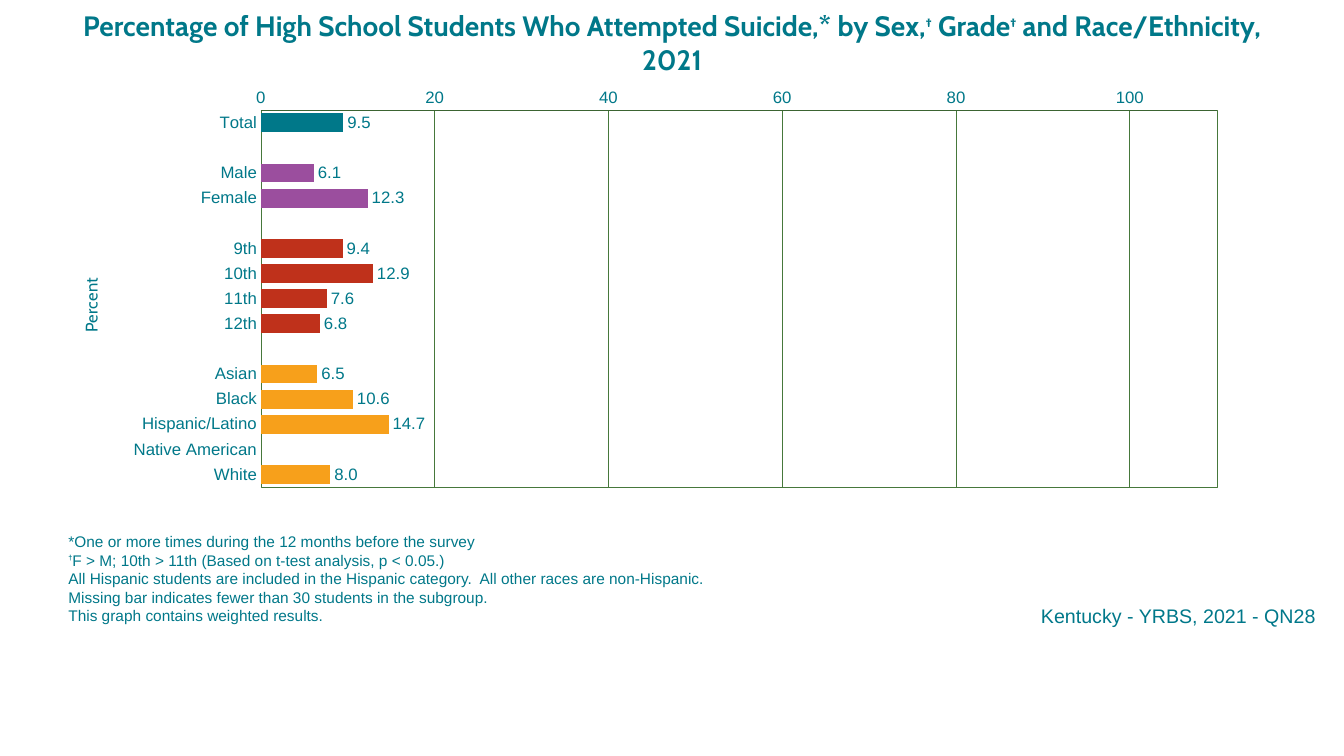
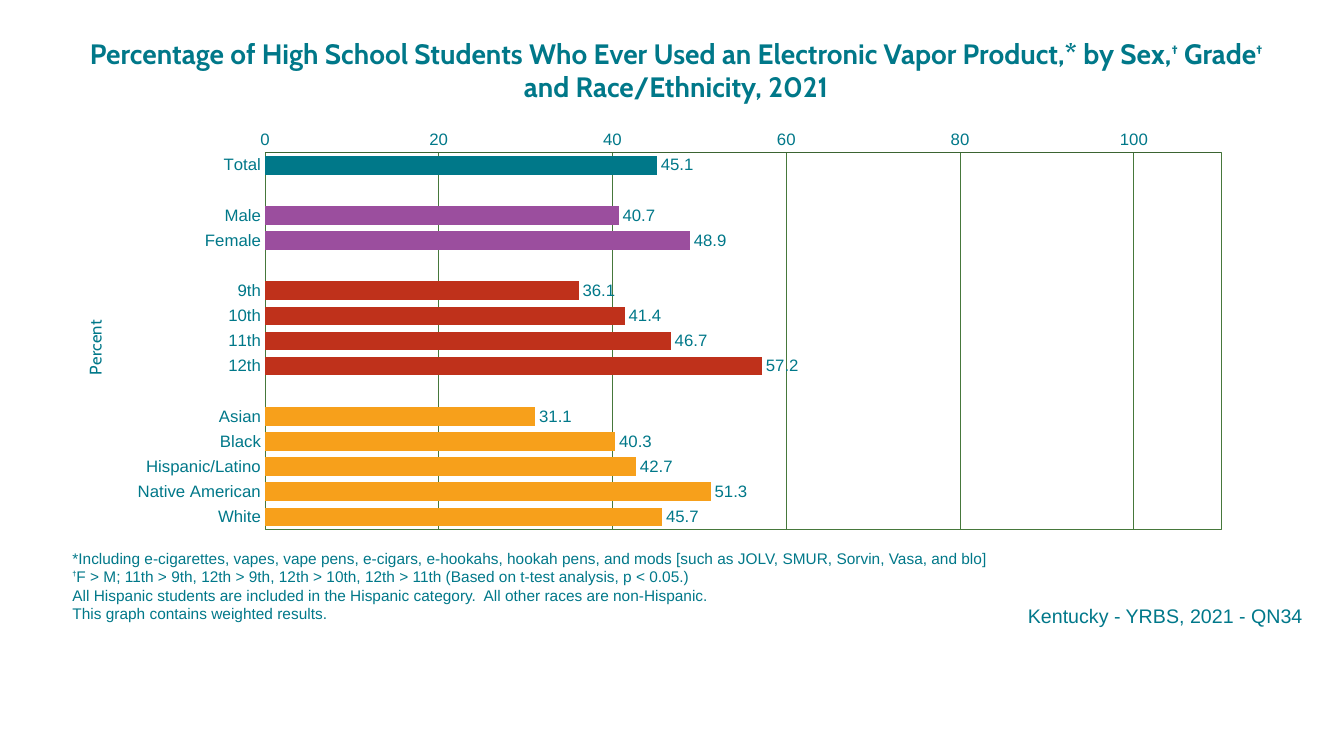
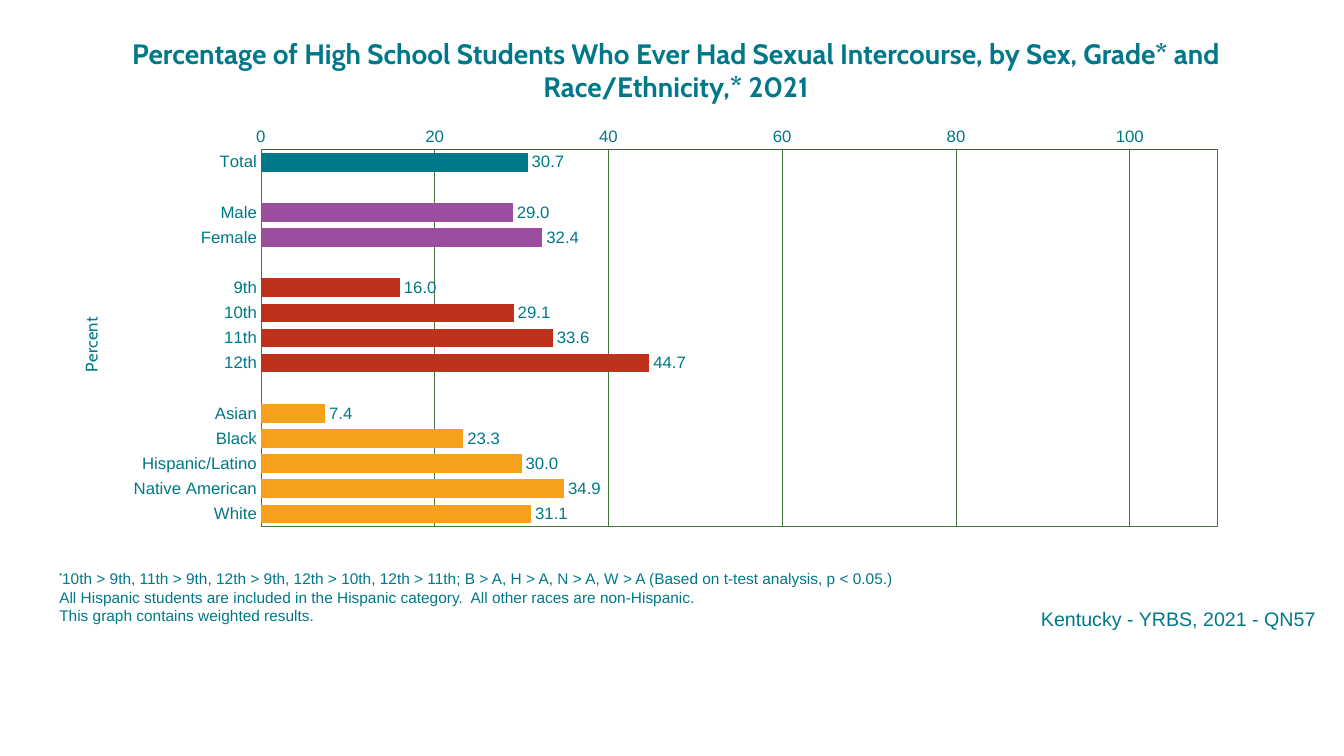
from dataclasses import dataclass

from lxml import etree
from pptx import Presentation
from pptx.chart.data import CategoryChartData
from pptx.dml.color import RGBColor
from pptx.enum.chart import XL_CHART_TYPE, XL_LABEL_POSITION, XL_TICK_MARK
from pptx.enum.text import MSO_ANCHOR, PP_ALIGN
from pptx.oxml import parse_xml
from pptx.oxml.ns import nsdecls, qn
from pptx.util import Inches, Pt

BAR_CLUSTERED = XL_CHART_TYPE.BAR_CLUSTERED
OUTSIDE_END = XL_LABEL_POSITION.OUTSIDE_END
NO_TICK = XL_TICK_MARK.NONE
TOP, BOTTOM = MSO_ANCHOR.TOP, MSO_ANCHOR.BOTTOM
LEFT, CENTER, RIGHT = PP_ALIGN.LEFT, PP_ALIGN.CENTER, PP_ALIGN.RIGHT


@dataclass(frozen=True)
class Theme:
    teal: str = "007889"
    source_teal: str = "00788A"
    purple: str = "9B4E9E"
    red: str = "BF311B"
    orange: str = "F7A01B"
    grid: str = "46783B"
    axis: str = "3B6432"
    heading_font: str = "Cabin"
    body_font: str = "Arial"
    title_size: int = 20
    title_mark_size: int = 17
    chart_size: int = 12
    note_size: int = 11
    note_mark_size: int = 9
    source_size: int = 14


THEME = Theme()

# Each group of bars: colour and category names. A blank row parts the groups.
GROUPS = [
    (THEME.teal, ["Total"]),
    (THEME.purple, ["Male", "Female"]),
    (THEME.red, ["9th", "10th", "11th", "12th"]),
    (THEME.orange, ["Asian", "Black", "Hispanic/Latino", "Native American", "White"]),
]

HISPANIC_NOTE = ("All Hispanic students are included in the Hispanic category.  "
                 "All other races are non-Hispanic.")
WEIGHTED_NOTE = "This graph contains weighted results."

# In titles and notes, ^ raises the character that follows it.
SLIDES = [
    {
        "title": "Percentage of High School Students Who Attempted Suicide,* "
                 "by Sex,^† Grade^† and Race/Ethnicity, 2021",
        "title_at": (0.71, 0.04),
        "values": [[9.5], [6.1, 12.3], [9.4, 12.9, 7.6, 6.8],
                   [6.5, 10.6, 14.7, None, 8.0]],
        "chart_at": (0.58, 0.88),
        "notes": ["*One or more times during the 12 months before the survey",
                  "^†F > M; 10th > 11th (Based on t-test analysis, p < 0.05.)",
                  HISPANIC_NOTE,
                  "Missing bar indicates fewer than 30 students in the subgroup.",
                  WEIGHTED_NOTE],
        "notes_at": (0.58, 5.96),
        "question": "QN28",
        "source_at": (3.75, 5.94),
    },
    {
        "title": "Percentage of High School Students Who Ever Used an Electronic "
                 "Vapor Product,* by Sex,^† Grade^† and Race/Ethnicity, 2021",
        "title_at": (0.75, 0.31),
        "values": [[45.1], [40.7, 48.9], [36.1, 41.4, 46.7, 57.2],
                   [31.1, 40.3, 42.7, 51.3, 45.7]],
        "chart_at": (0.62, 1.3),
        "notes": ["*Including e-cigarettes, vapes, vape pens, e-cigars, e-hookahs, "
                  "hookah pens, and mods [such as JOLV, SMUR, Sorvin, Vasa, and blo]",
                  "^†F > M; 11th > 9th, 12th > 9th, 12th > 10th, 12th > 11th "
                  "(Based on t-test analysis, p < 0.05.)",
                  HISPANIC_NOTE,
                  WEIGHTED_NOTE],
        "notes_at": (0.62, 5.94),
        "question": "QN34",
        "source_at": (3.62, 5.94),
    },
    {
        "title": "Percentage of High School Students Who Ever Had Sexual Intercourse, "
                 "by Sex, Grade* and Race/Ethnicity,* 2021",
        "title_at": (0.75, 0.31),
        "values": [[30.7], [29.0, 32.4], [16.0, 29.1, 33.6, 44.7],
                   [7.4, 23.3, 30.0, 34.9, 31.1]],
        "chart_at": (0.58, 1.27),
        "notes": ["^*10th > 9th, 11th > 9th, 12th > 9th, 12th > 10th, 12th > 11th; "
                  "B > A, H > A, N > A, W > A (Based on t-test analysis, p < 0.05.)",
                  HISPANIC_NOTE,
                  WEIGHTED_NOTE],
        "notes_at": (0.49, 5.96),
        "question": "QN57",
        "source_at": (3.75, 5.97),
    },
]


def rgb(color):
    return RGBColor.from_string(color)


def style_font(font, name, size, color, bold=False):
    font.name, font.size, font.bold = name, Pt(size), bold
    font.color.rgb = rgb(color)


def style_line(line, color, width):
    line.color.rgb = rgb(color)
    line.width = Pt(width)


def add_marked_text(paragraph, text, mark_size, raise_by):
    """Write text, raising each character that follows ^ by a percentage."""
    plain, *marked = text.split("^")
    if plain:
        paragraph.add_run().text = plain
    for part in marked:
        mark = paragraph.add_run()
        mark.text = part[0]
        mark.font.size = Pt(mark_size)
        mark.font.bold = True
        mark.font._element.set("baseline", str(raise_by * 1000))
        paragraph.add_run().text = part[1:]


def add_text_box(slide, position, size, alignment, anchor, lines, font,
                 mark_size=0, raise_by=0):
    box = slide.shapes.add_textbox(*map(Inches, position + size))
    frame = box.text_frame
    frame.word_wrap = True
    frame.vertical_anchor = anchor
    for index, line in enumerate(lines):
        paragraph = frame.add_paragraph() if index else frame.paragraphs[0]
        paragraph.alignment = alignment
        style_font(paragraph.font, *font)
        add_marked_text(paragraph, line, mark_size, raise_by)


def add_title(slide, position, text):
    add_text_box(slide, position, (11.91, 0.77), CENTER, TOP, [text],
                 (THEME.heading_font, THEME.title_size, THEME.teal, True),
                 THEME.title_mark_size, 40)


def add_notes_block(slide, position, lines):
    """Place the footnotes, which grow upwards from the foot of their box."""
    add_text_box(slide, position, (12.17, 0.29), LEFT, BOTTOM, lines,
                 (THEME.body_font, THEME.note_size, THEME.teal),
                 THEME.note_mark_size, 50)


def add_source(slide, position, question):
    add_text_box(slide, position, (9.4, 0.34), RIGHT, TOP,
                 [f"Kentucky - YRBS, 2021 - {question}"],
                 (THEME.body_font, THEME.source_size, THEME.source_teal))


def set_layout(parent, index, **settings):
    """Give a chart part a manual layout, as fractions of the chart."""
    for old_layout in parent.findall(qn("c:layout")):
        parent.remove(old_layout)
    layout = etree.Element(qn("c:layout"))
    manual = etree.SubElement(layout, qn("c:manualLayout"))
    for name, value in settings.items():
        etree.SubElement(manual, qn(f"c:{name}")).set("val", str(value))
    parent.insert(index, layout)


def style_axis(axis, line_color):
    axis.major_tick_mark = axis.minor_tick_mark = NO_TICK
    style_font(axis.tick_labels.font, THEME.body_font, THEME.chart_size, THEME.teal)
    style_line(axis.format.line, line_color, 0.25)


def add_axis_title(axis, text):
    """Write the axis title upright along the left edge of the chart."""
    title = axis.axis_title
    paragraph = title.text_frame.paragraphs[0]
    paragraph.text = text
    style_font(paragraph.font, THEME.heading_font, THEME.chart_size, THEME.teal)
    body = title.element.find(".//" + qn("a:bodyPr"))
    body.set("rot", "-5400000")
    body.set("vert", "horz")
    set_layout(title.element, 1, xMode="edge", yMode="edge", x=0.015, y=0.39)


def style_plot_area(chart):
    plot_area = chart.element.find(".//" + qn("c:plotArea"))
    set_layout(plot_area, 0, layoutTarget="inner", xMode="edge", yMode="edge",
               x=0.165, y=0.035, w=0.779, h=0.81)
    plot_area.append(parse_xml(
        f'<c:spPr {nsdecls("c", "a")}><a:noFill/><a:ln w="3175"><a:solidFill>'
        f'<a:srgbClr val="{THEME.grid}"/></a:solidFill></a:ln></c:spPr>'))


def add_percent_chart(slide, position, values_by_group):
    categories, values, colors = [], [], []
    for (color, names), group_values in zip(GROUPS, values_by_group):
        if categories:
            categories.append("")
            values.append(None)
            colors.append(color)
        categories += names
        values += group_values
        colors += [color] * len(names)

    data = CategoryChartData()
    data.categories = categories
    data.add_series("Series 1", values)
    frame = slide.shapes.add_chart(
        BAR_CLUSTERED, *map(Inches, position + (12.17, 4.67)), data)
    chart = frame.chart
    chart.has_title = chart.has_legend = False
    chart.font.name = THEME.heading_font
    chart.font.size = Pt(18)

    category_axis, value_axis = chart.category_axis, chart.value_axis
    style_axis(category_axis, THEME.grid)
    category_axis.reverse_order = True
    style_axis(value_axis, THEME.axis)
    value_axis.minimum_scale, value_axis.maximum_scale = 0, 110
    value_axis.major_unit = 20
    style_line(value_axis.major_gridlines.format.line, THEME.grid, 0.5)
    add_axis_title(value_axis, "Percent")
    style_plot_area(chart)

    plot = chart.plots[0]
    plot.gap_width = 34
    plot.vary_by_categories = False
    series = plot.series[0]
    series.format.fill.solid()
    series.format.fill.fore_color.rgb = rgb(THEME.teal)
    for index, color in enumerate(colors):
        fill = series.points[index].format.fill
        fill.solid()
        fill.fore_color.rgb = rgb(color)
    labels = series.data_labels
    labels.show_value = True
    labels.position = OUTSIDE_END
    labels.number_format = "#,##0.0"
    labels.number_format_is_linked = False
    style_font(labels.font, THEME.body_font, THEME.chart_size, THEME.teal)


def add_survey_slide(presentation, content):
    slide = presentation.slides.add_slide(presentation.slide_layouts[6])
    add_title(slide, content["title_at"], content["title"])
    add_percent_chart(slide, content["chart_at"], content["values"])
    add_notes_block(slide, content["notes_at"], content["notes"])
    add_source(slide, content["source_at"], content["question"])


def main():
    presentation = Presentation()
    presentation.slide_width = Inches(13.33)
    presentation.slide_height = Inches(7.5)
    for content in SLIDES:
        add_survey_slide(presentation, content)
    presentation.save("out.pptx")


if __name__ == "__main__":
    main()
